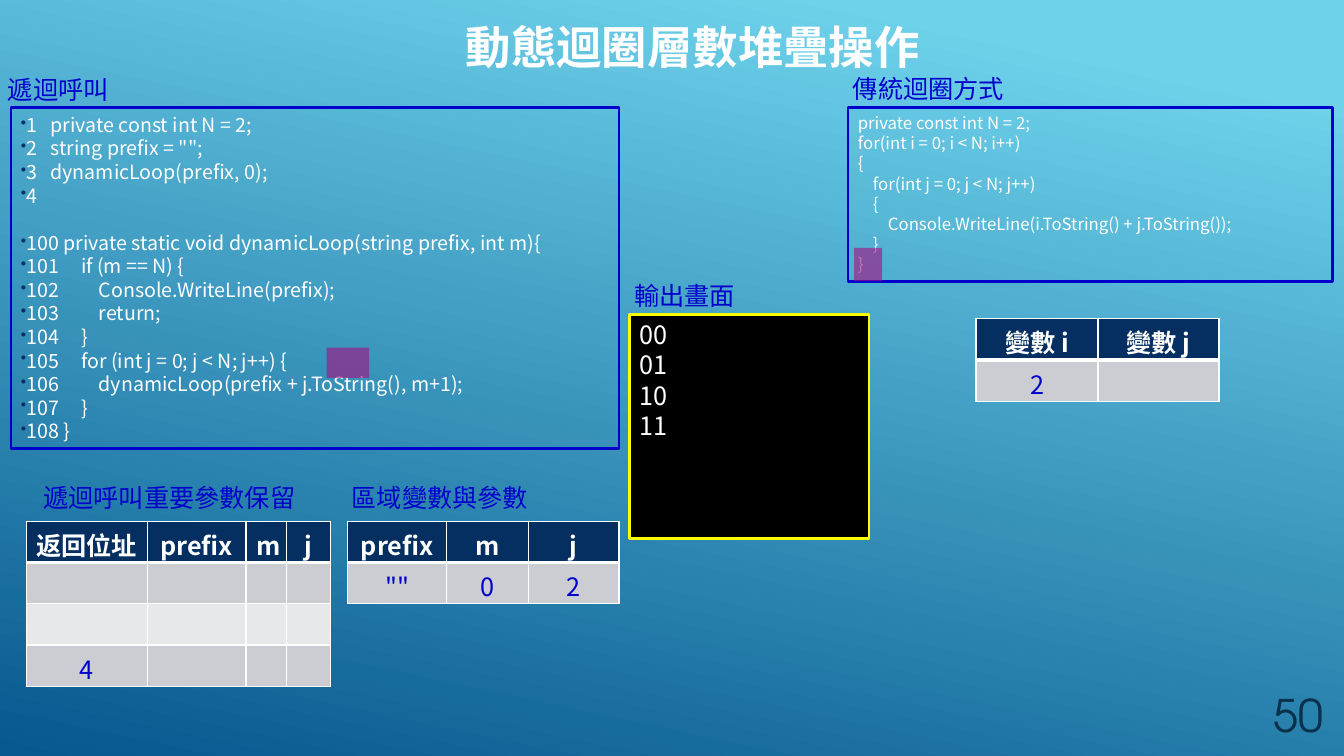
from lxml import etree
from pptx import Presentation
from pptx.dml.color import RGBColor
from pptx.enum.shapes import MSO_SHAPE
from pptx.enum.text import MSO_ANCHOR, MSO_AUTO_SIZE, PP_ALIGN
from pptx.oxml.ns import qn
from pptx.util import Inches, Pt

RECTANGLE = MSO_SHAPE.RECTANGLE
CENTER, RIGHT = PP_ALIGN.CENTER, PP_ALIGN.RIGHT
TOP, BOTTOM = MSO_ANCHOR.TOP, MSO_ANCHOR.BOTTOM

THEME = {
    "font": "Noto Sans CJK SC", "display": "TeX Gyre Adventor",
    "white": "FFFFFF", "blue": "0000CC", "navy": "052F61", "number": "0A304A",
    "black": "000000", "yellow": "FFFF00", "marker": "A50E82",
    "bands": ("CCCDD2", "E7E8EA"), "sky": "6ED2EB", "deep": "06588E",
    "title_size": 32.4, "number_size": 32, "text_size": 18,
    "code_size": 14, "small_size": 12,
}

# Content
TITLE = "動態迴圈層數堆疊操作"
PAGE = "50"
LABELS = [
    ("輸出畫面", (6.19, 2.73, 1.58, 0.38)),
    ("遞迴呼叫", (-0.02, 0.69, 1.26, 0.38)),
    ("傳統迴圈方式", (8.36, 0.68, 1.78, 0.38)),
    ("遞迴呼叫重要參數保留", (0.33, 4.74, 2.89, 0.47)),
    ("區域變數與參數", (3.39, 4.74, 2.89, 0.47)),
]
RECURSION = [
    "1   private const int N = 2;",
    '2   string prefix = "";',
    "3   dynamicLoop(prefix, 0);",
    "4",
    "100 private static void dynamicLoop(string prefix, int m){",
    "101     if (m == N) {",
    "102         Console.WriteLine(prefix);",
    "103         return;",
    "104     }",
    "105     for (int j = 0; j < N; j++) {",
    "106         dynamicLoop(prefix + j.ToString(), m+1);",
    "107     }",
    "108 }",
]
METHOD_START = 4
NESTED_LOOPS = [
    "private const int N = 2;",
    "for(int i = 0; i < N; i++)",
    "{",
    "    for(int j = 0; j < N; j++)",
    "    {",
    "        Console.WriteLine(i.ToString() + j.ToString());",
    "    }",
    "}",
]
OUTPUT = ["00", "01", "10", "11"]
TABLES = [  # left, top, column widths, rows
    (9.68, 3.16, (1.21, 1.2), [("變數 i", "變數 j"), ("2", "")]),
    (0.26, 5.17, (1.2, 0.98, 0.4, 0.44),
     [("返回位址", "prefix", "m", "j"), ("",) * 4, ("",) * 4, ("4", "", "", "")]),
    (3.45, 5.17, (0.98, 0.81, 0.9), [("prefix", "m", "j"), ('""', "0", "2")]),
]
ROW_HEIGHT = 0.41
MARKERS = [(3.24, 3.45, 0.42, 0.3), (8.47, 2.46, 0.28, 0.33)]


def rgb(name):
    return RGBColor.from_string(THEME.get(name, name))


def inches(box):
    return [Inches(value) for value in box]


def write(frame, lines, size, color, bold=False, align=None, font="font"):
    frame.text = "\n".join(lines)
    for paragraph in frame.paragraphs:
        paragraph.alignment = align
        for run in paragraph.runs:
            run.font.size, run.font.bold = Pt(THEME[size]), bold
            run.font.name = THEME[font]
            run.font.color.rgb = rgb(color)
            east_asian = etree.SubElement(run.font._element, qn("a:ea"))
            east_asian.set("typeface", THEME[font])


def add_label(slide, text, box, **style):
    frame = slide.shapes.add_textbox(*inches(box)).text_frame
    frame.word_wrap = True
    write(frame, [text], **style)
    return frame


def add_panel(slide, box, lines, size, line, fill=None):
    panel = slide.shapes.add_shape(RECTANGLE, *inches(box))
    panel.shadow.inherit = False
    panel.fill.background()
    if fill:
        panel.fill.solid()
        panel.fill.fore_color.rgb = rgb(fill)
    panel.line.color.rgb = rgb(line)
    panel.line.width = Pt(2)
    frame = panel.text_frame
    frame.vertical_anchor = TOP
    write(frame, lines, size, "white", align=PP_ALIGN.LEFT)
    return frame


def add_bullet(paragraph):
    props = paragraph._p.get_or_add_pPr()
    color = etree.SubElement(props, qn("a:buClr"))
    etree.SubElement(color, qn("a:srgbClr")).set("val", THEME["navy"])
    etree.SubElement(props, qn("a:buSzPct")).set("val", "80000")
    etree.SubElement(props, qn("a:buChar")).set("char", "•")


def set_borders(cell, bottom):
    props = cell._tc.get_or_add_tcPr()
    for position, side in enumerate(("lnL", "lnR", "lnT", "lnB")):
        line = etree.Element(qn("a:" + side))
        line.set("w", str(Pt(bottom if side == "lnB" else 1)))
        fill = etree.SubElement(line, qn("a:solidFill"))
        etree.SubElement(fill, qn("a:srgbClr")).set("val", THEME["white"])
        props.insert(position, line)


def add_grid(slide, left, top, widths, rows):
    box = (left, top, sum(widths), ROW_HEIGHT * len(rows))
    table = slide.shapes.add_table(len(rows), len(widths), *inches(box)).table
    for column, width in zip(table.columns, widths):
        column.width = Inches(width)
    for r, row in enumerate(rows):
        table.rows[r].height = Inches(ROW_HEIGHT)
        header = r == 0
        for c, value in enumerate(row):
            cell = table.cell(r, c)
            cell.fill.solid()
            cell.fill.fore_color.rgb = rgb("navy" if header else THEME["bands"][(r - 1) % 2])
            write(cell.text_frame, [value], "text_size",
                  "white" if header else "blue", header, CENTER)
            set_borders(cell, 3 if header else 1)


def add_marker(slide, box):
    marker = slide.shapes.add_shape(RECTANGLE, *inches(box))
    marker.shadow.inherit = False
    marker.line.fill.background()
    marker.fill.solid()
    marker.fill.fore_color.rgb = rgb("marker")
    color = marker._element.spPr.find(qn("a:solidFill"))[0]
    etree.SubElement(color, qn("a:alpha")).set("val", "60000")


def main():
    deck = Presentation()
    deck.slide_width, deck.slide_height = Inches(13.33), Inches(7.5)
    slide = deck.slides.add_slide(deck.slide_layouts[5])

    # Background
    background = slide.background.fill
    background.gradient()
    background.gradient_angle = 258
    for stop, color, position in zip(background.gradient_stops, ("sky", "deep"), (0.1, 1)):
        stop.color.rgb, stop.position = rgb(color), position

    # Title and page number
    title = slide.shapes.title
    title.left, title.top, title.width, title.height = inches((4.4, 0.14, 4.94, 0.64))
    title.text_frame.auto_size = MSO_AUTO_SIZE.NONE
    title.text_frame.vertical_anchor = BOTTOM
    write(title.text_frame, [TITLE], "title_size", "white", True, CENTER, "display")
    title.text_frame.paragraphs[0].line_spacing = 0.85
    page = add_label(slide, PAGE, (11.97, 6.68, 1.25, 0.73), size="number_size",
                     color="number", align=RIGHT, font="display")
    page.vertical_anchor = BOTTOM

    # Code and output panels
    recursion = add_panel(slide, (0.11, 1.07, 6.03, 3.38), RECURSION, "code_size", "blue")
    recursion.paragraphs[METHOD_START].space_before = Pt(17)
    for paragraph in recursion.paragraphs:
        add_bullet(paragraph)
    add_panel(slide, (6.24, 3.12, 2.38, 2.22), OUTPUT, "text_size", "yellow", "black")
    add_panel(slide, (8.41, 1.07, 4.81, 1.72), NESTED_LOOPS, "small_size", "blue")

    # Labels, tables and current-line markers
    for text, box in LABELS:
        add_label(slide, text, box, size="text_size", color="blue")
    for grid in TABLES:
        add_grid(slide, *grid)
    for box in MARKERS:
        add_marker(slide, box)

    deck.save("out.pptx")


if __name__ == "__main__":
    main()
